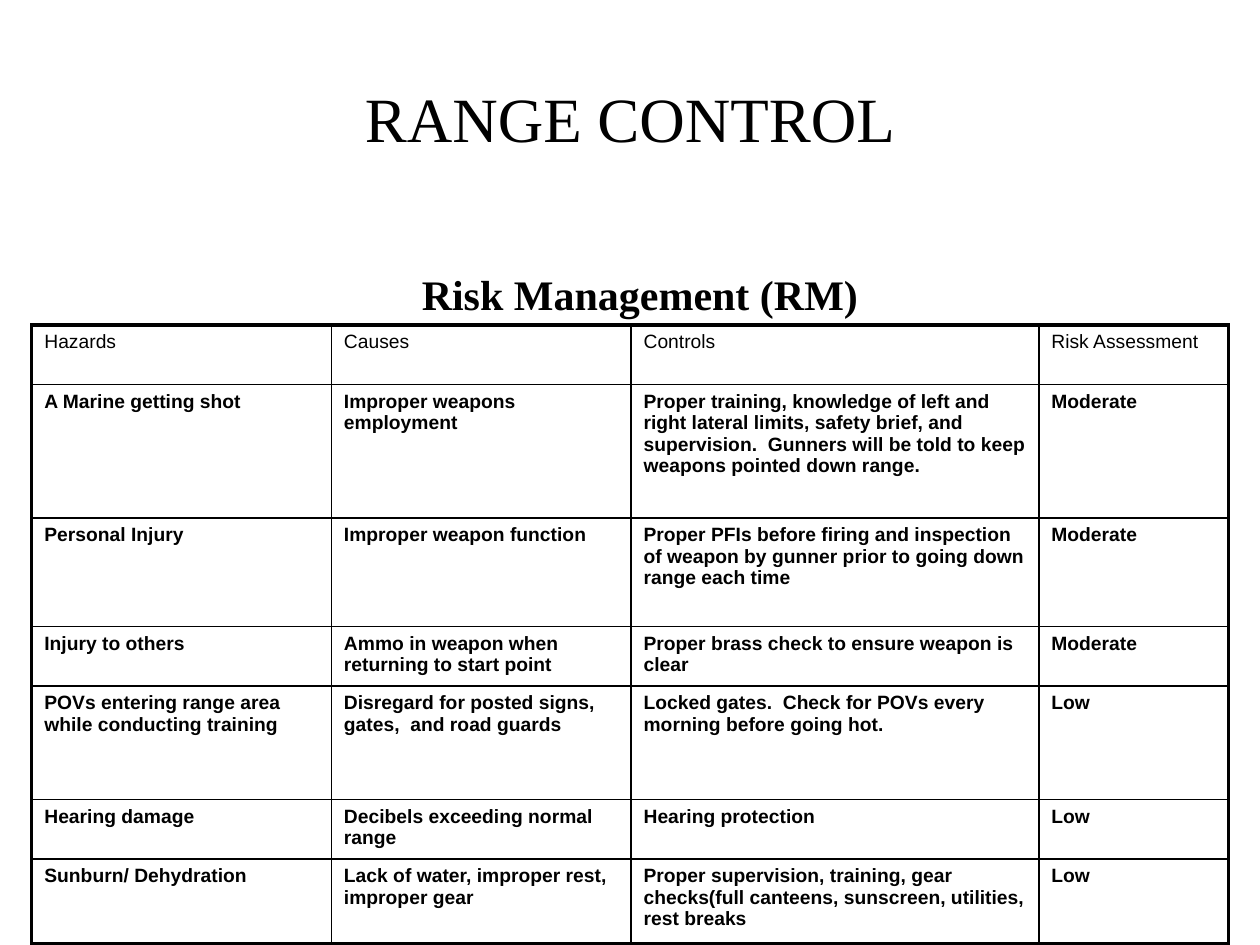
"""Build the range control risk management slide."""
from lxml import etree
from pptx import Presentation, util as u
from pptx.dml.color import RGBColor
from pptx.enum import text
from pptx.oxml.ns import qn

COLORS = {"ink": "000000"}
TITLE = "RANGE CONTROL"
SUBTITLE = "Risk Management (RM)"
HEADER = ("Hazards", "Causes", "Controls", "Risk Assessment")
RISKS = [
    ("A Marine getting shot", "Improper weapons employment",
     "Proper training, knowledge of left and right lateral limits, safety brief, and "
     "supervision.  Gunners will be told to keep weapons pointed down range.", "Moderate"),
    ("Personal Injury", "Improper weapon function",
     "Proper PFIs before firing and inspection of weapon by gunner prior to going down "
     "range each time", "Moderate"),
    ("Injury to others", "Ammo in weapon when returning to start point",
     "Proper brass check to ensure weapon is clear", "Moderate"),
    ("POVs entering range area while conducting training",
     "Disregard for posted signs, gates,  and road guards",
     "Locked gates.  Check for POVs every morning before going hot.", "Low"),
    ("Hearing damage", "Decibels exceeding normal range", "Hearing protection", "Low"),
    ("Sunburn/ Dehydration", "Lack of water, improper rest, improper gear",
     "Proper supervision, training, gear checks(full canteens, sunscreen, utilities, "
     "rest breaks", "Low"),
]
COLUMN_WIDTHS = (6.04, 6.04, 8.22, 3.83)
ROW_HEIGHTS = (1.2, 2.69, 2.19, 1.2, 2.29, 1.2, 1.7)
OUTER, INNER = 2.25, 1


def write(frame, words, font, size, bold=False, align=text.PP_ALIGN.LEFT):
    """Put one formatted run in a text frame."""
    paragraph = frame.paragraphs[0]
    paragraph.alignment = align
    paragraph.space_before = u.Pt(0)
    run = paragraph.add_run()
    run.text = words
    run.font.name, run.font.size, run.font.bold = font, u.Pt(size), bold
    run.font.color.rgb = RGBColor.from_string(COLORS["ink"])


def place(shape, left, top, width, height):
    """Set the bounds of a shape in centimetres."""
    shape.left, shape.top = u.Cm(left), u.Cm(top)
    shape.width, shape.height = u.Cm(width), u.Cm(height)


def write_heading(shape, words, size, bold=False):
    """Write a centred serif heading."""
    frame = shape.text_frame
    frame.word_wrap = True
    frame.auto_size = text.MSO_AUTO_SIZE.NONE
    frame.vertical_anchor = text.MSO_ANCHOR.MIDDLE
    write(frame, words, "Times New Roman", size, bold, text.PP_ALIGN.CENTER)


def add_borders(cell, widths):
    """Draw the four sides of a cell, given as left, right, top, bottom."""
    properties = cell._tc.get_or_add_tcPr()
    for index, (side, width) in enumerate(zip("LRTB", widths)):
        line = etree.Element(qn(f"a:ln{side}"), w=str(u.Pt(width)))
        fill = etree.SubElement(line, qn("a:solidFill"))
        etree.SubElement(fill, qn("a:srgbClr"), val=COLORS["ink"])
        properties.insert(index, line)


def add_risk_table(slide):
    """Add the bordered table of hazards."""
    rows = [HEADER, *RISKS]
    last_row, last_column = len(rows) - 1, len(HEADER) - 1
    table = slide.shapes.add_table(
        len(rows), len(HEADER), u.Cm(0.64), u.Cm(6.55),
        u.Cm(sum(COLUMN_WIDTHS)), u.Cm(sum(ROW_HEIGHTS))).table
    table.first_row = table.horz_banding = False
    for column, width in zip(table.columns, COLUMN_WIDTHS):
        column.width = u.Cm(width)
    for row, height in zip(table.rows, ROW_HEIGHTS):
        row.height = u.Cm(height)
    for i, values in enumerate(rows):
        for j, value in enumerate(values):
            cell = table.cell(i, j)
            cell.fill.background()
            write(cell.text_frame, value, "Arial", 11, bold=i > 0)
            edges = (j == 0, j == last_column, i == 0, i == last_row)
            add_borders(cell, [OUTER if edge else INNER for edge in edges])


def main():
    """Build and save the presentation."""
    presentation = Presentation()
    presentation.slide_width, presentation.slide_height = u.Cm(25.4), u.Cm(19.05)
    slide = presentation.slides.add_slide(presentation.slide_layouts[5])
    add_risk_table(slide)

    subtitle = slide.shapes.add_textbox(0, 0, 0, 0)
    place(subtitle, 0.2, 5.28, 25.4, 1.27)
    write_heading(subtitle, SUBTITLE, 24, bold=True)

    title = slide.shapes.title
    place(title, 0, 0.64, 25.4, 3.18)
    title.text_frame.margin_top = u.Cm(0.38)
    write_heading(title, TITLE, 36)
    presentation.save("out.pptx")


if __name__ == "__main__":
    main()
